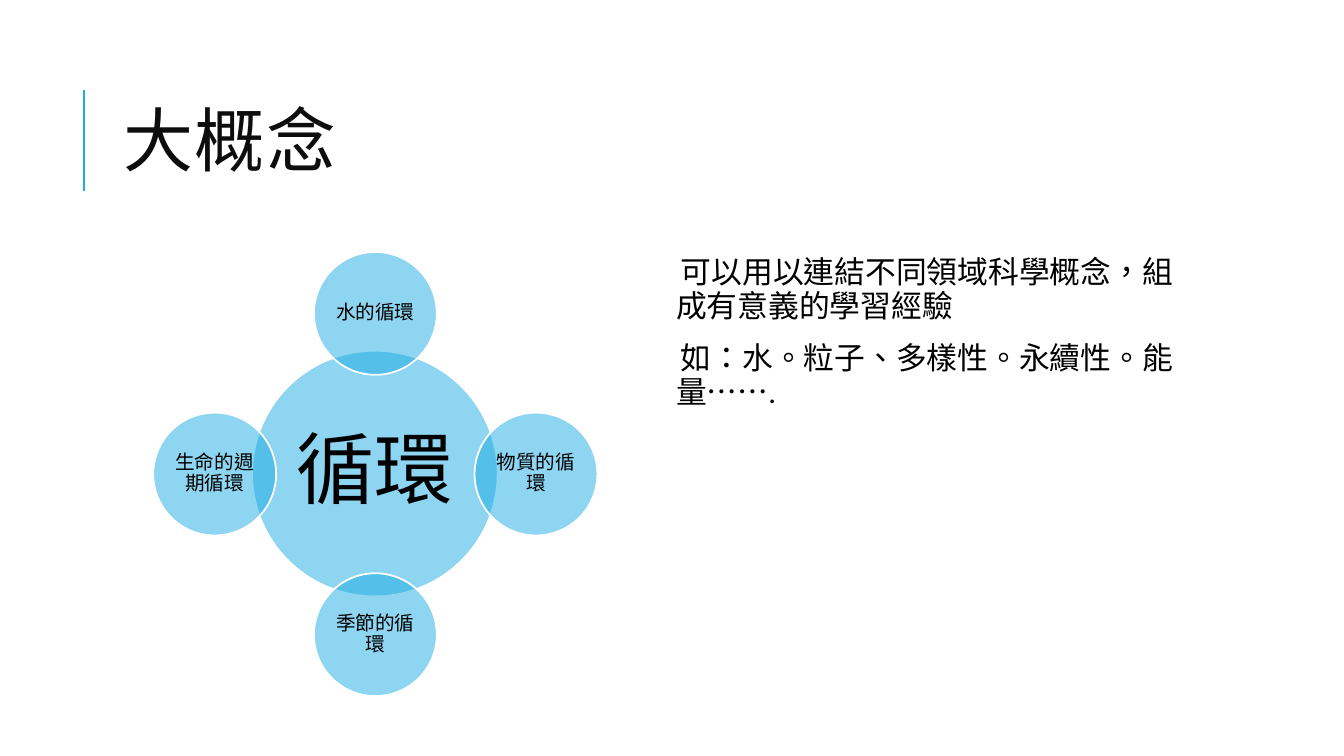
from lxml.etree import SubElement
from pptx import Presentation
from pptx.dml.color import RGBColor
from pptx.enum.lang import MSO_LANGUAGE_ID
from pptx.enum.shapes import MSO_CONNECTOR, MSO_SHAPE
from pptx.enum.text import MSO_ANCHOR, MSO_AUTO_SIZE, PP_ALIGN
from pptx.oxml.ns import qn
from pptx.util import Pt

PX = 9525
BLUE = RGBColor(0x1C, 0xAD, 0xE4)
WHITE = RGBColor(0xFF, 0xFF, 0xFF)
BLACK = RGBColor(0x00, 0x00, 0x00)
INK = RGBColor(0x0D, 0x0D, 0x0D)

CENTER_X, CENTER_Y = 357, 451
HUB_SIZE, CYCLE_SIZE, ORBIT = 234, 117, 153
CYCLES = [
    ("水的循環", 0, -1),
    ("物質的循環", 1, 0),
    ("季節的循環", 0, 1),
    ("生命的週期循環", -1, 0),
]
NOTES = [
    "可以用以連結不同領域科學概念，組成有意義的學習經驗",
    "如：水。粒子、多樣性。永續性。能量…….",
]


class ConceptSlide:
    heading_font = "Cabin"
    body_font = "Calibri"

    def __init__(self, presentation):
        self.slide = presentation.slides.add_slide(presentation.slide_layouts[5])
        self.shapes = self.slide.shapes

    def format_runs(self, paragraph, size, font_name, color):
        for run in paragraph.runs:
            run.font.size = Pt(size)
            run.font.name = font_name
            run.font.color.rgb = color
            run.font.language_id = MSO_LANGUAGE_ID.TRADITIONAL_CHINESE

    def set_margins(self, text_frame, margin):
        text_frame.margin_left = text_frame.margin_right = margin * PX
        text_frame.margin_top = text_frame.margin_bottom = margin * PX

    def rule(self, x, top, bottom):
        line = self.shapes.add_connector(
            MSO_CONNECTOR.STRAIGHT, x * PX, bottom * PX, x * PX, top * PX)
        line.line.color.rgb = BLUE
        line.line.width = Pt(1.5)
        SubElement(line._element.spPr, qn("a:effectLst"))

    def title(self, text, left, top, width, height):
        title = self.shapes.title
        title.left, title.top = left * PX, top * PX
        title.width, title.height = width * PX, height * PX
        text_frame = title.text_frame
        text_frame.text = text
        text_frame.auto_size = MSO_AUTO_SIZE.NONE
        text_frame.vertical_anchor = MSO_ANCHOR.MIDDLE
        paragraph = text_frame.paragraphs[0]
        paragraph.alignment = PP_ALIGN.LEFT
        paragraph.line_spacing = 0.8
        self.format_runs(paragraph, 50, self.heading_font, INK)
        paragraph.runs[0].font._element.set("spc", "100")

    def circle(self, text, center_x, center_y, diameter, size, margin):
        left, top = center_x - diameter // 2, center_y - diameter // 2
        circle = self.shapes.add_shape(
            MSO_SHAPE.OVAL, left * PX, top * PX, diameter * PX, diameter * PX)
        circle.shadow.inherit = False
        circle.fill.solid()
        circle.fill.fore_color.rgb = BLUE
        color = circle._element.spPr.find(qn("a:solidFill")).find(qn("a:srgbClr"))
        SubElement(color, qn("a:alpha"), val="50000")
        circle.line.color.rgb = WHITE
        circle.line.width = Pt(1.25)
        text_frame = circle.text_frame
        text_frame.text = text
        text_frame.word_wrap = True
        text_frame.vertical_anchor = MSO_ANCHOR.MIDDLE
        self.set_margins(text_frame, margin)
        paragraph = text_frame.paragraphs[0]
        paragraph.alignment = PP_ALIGN.CENTER
        paragraph.line_spacing = 0.9
        self.format_runs(paragraph, size, self.body_font, BLACK)

    def body(self, lines, left, top, width, height):
        box = self.shapes.add_textbox(left * PX, top * PX, width * PX, height * PX)
        text_frame = box.text_frame
        text_frame.word_wrap = True
        self.set_margins(text_frame, 5)
        text_frame.text = "\n".join(lines)
        for paragraph in text_frame.paragraphs:
            paragraph.line_spacing = 0.9
            paragraph.space_before = Pt(12)
            paragraph.space_after = Pt(2)
            properties = paragraph._p.get_or_add_pPr()
            properties.set("marL", str(10 * PX))
            properties.set("indent", str(-10 * PX))
            SubElement(properties, qn("a:buChar"), char=" ")
            self.format_runs(paragraph, 22, self.body_font, BLACK)


def main():
    presentation = Presentation()
    presentation.slide_width = 1280 * PX
    presentation.slide_height = 720 * PX
    concept = ConceptSlide(presentation)
    concept.rule(80, 86, 182)
    concept.title("大概念", 108, 61, 1020, 157)
    concept.circle("循環", CENTER_X, CENTER_Y, HUB_SIZE, 56, 8)
    for text, step_x, step_y in CYCLES:
        concept.circle(text, CENTER_X + step_x * ORBIT, CENTER_Y + step_y * ORBIT,
                       CYCLE_SIZE, 14, 2)
    concept.body(NOTES, 629, 240, 499, 422)
    presentation.save("out.pptx")


if __name__ == "__main__":
    main()
